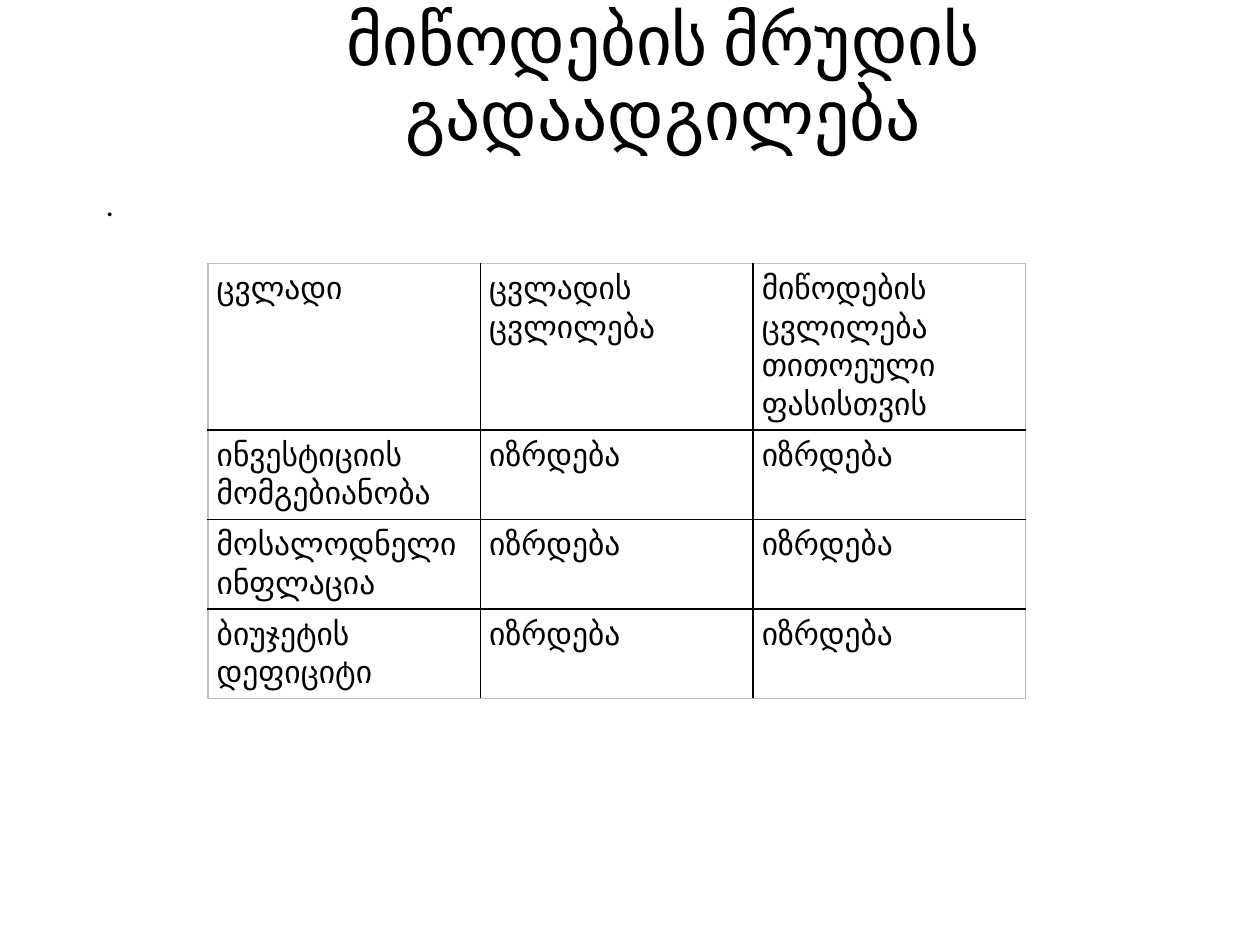
from dataclasses import dataclass

from lxml.etree import SubElement
from pptx import Presentation
from pptx.dml.color import RGBColor
from pptx.enum.text import MSO_ANCHOR, MSO_AUTO_SIZE, PP_ALIGN
from pptx.oxml.ns import qn
from pptx.util import Inches, Pt


@dataclass(frozen=True)
class Theme:
    font: str = "Calibri"
    text: str = "000000"
    background: str = "FFFFFF"
    inner_border: str = "000000"
    outer_border: str = "BFBFBF"
    title_size: float = 39.6
    body_size: float = 18
    border_width: float = 1


THEME = Theme()
TITLE = "მიწოდების მრუდის გადაადგილება"
HEADER = ["ცვლადი", "ცვლადის ცვლილება", "მიწოდების ცვლილება თითოეული ფასისთვის"]
VARIABLES = ["ინვესტიციის მომგებიანობა", "მოსალოდნელი ინფლაცია", "ბიუჯეტის დეფიციტი"]
INCREASE = "იზრდება"


def style_paragraph(paragraph, size):
    paragraph.alignment = PP_ALIGN.LEFT
    paragraph.font.name = THEME.font
    paragraph.font.size = Pt(size)
    paragraph.font.bold = False
    paragraph.font.color.rgb = RGBColor.from_string(THEME.text)


def fill_placeholder(shape, box, text, size, anchor):
    shape.left, shape.top, shape.width, shape.height = map(Inches, box)
    frame = shape.text_frame
    frame.text = text
    frame.auto_size = MSO_AUTO_SIZE.NONE
    frame.vertical_anchor = anchor
    paragraph = frame.paragraphs[0]
    style_paragraph(paragraph, size)
    paragraph.line_spacing = 0.9
    return paragraph


def add_title(slide, box):
    paragraph = fill_placeholder(
        slide.shapes.title, box, TITLE, THEME.title_size, MSO_ANCHOR.BOTTOM)
    paragraph.alignment = PP_ALIGN.CENTER
    properties = paragraph._p.get_or_add_pPr()
    properties.set("marL", str(Inches(0.2)))
    properties.set("indent", "0")


def add_subtitle(slide, box):
    paragraph = fill_placeholder(
        slide.placeholders[1], box, ".", THEME.body_size, MSO_ANCHOR.TOP)
    paragraph.space_before = Pt(7.5)


def set_borders(cell, outer_sides):
    properties = cell._tc.get_or_add_tcPr()
    for position, (side, outer) in enumerate(outer_sides.items()):
        line = SubElement(properties, qn(f"a:ln{side}"), w=str(Pt(THEME.border_width)))
        fill = SubElement(line, qn("a:solidFill"))
        color = THEME.outer_border if outer else THEME.inner_border
        SubElement(fill, qn("a:srgbClr"), val=color)
        properties.insert(position, line)


def add_supply_table(slide, box):
    rows = [HEADER] + [[variable, INCREASE, INCREASE] for variable in VARIABLES]
    last_row, last_column = len(rows) - 1, len(HEADER) - 1
    table = slide.shapes.add_table(len(rows), len(HEADER), *map(Inches, box)).table
    table.first_row = False
    table.horz_banding = False
    for row_index, values in enumerate(rows):
        table.rows[row_index].height = Inches(0.71 if row_index else 1.32)
        for column_index, value in enumerate(values):
            cell = table.cell(row_index, column_index)
            cell.text = value
            cell.margin_left = cell.margin_right = Inches(0.07)
            cell.margin_top = cell.margin_bottom = Inches(0.05)
            cell.fill.solid()
            cell.fill.fore_color.rgb = RGBColor.from_string(THEME.background)
            style_paragraph(cell.text_frame.paragraphs[0], THEME.body_size)
            set_borders(cell, {
                "L": column_index == 0,
                "R": column_index == last_column,
                "T": row_index == 0,
                "B": row_index == last_row,
            })


def main():
    presentation = Presentation()
    presentation.slide_width = Inches(10)
    presentation.slide_height = Inches(7.5)
    slide = presentation.slides.add_slide(presentation.slide_layouts[0])
    add_title(slide, (0.74, 0.24, 8.85, 1.04))
    add_subtitle(slide, (0.74, 1.45, 8.74, 5.68))
    add_supply_table(slide, (1.65, 2.09, 6.49, 3.45))
    presentation.save("out.pptx")


if __name__ == "__main__":
    main()
